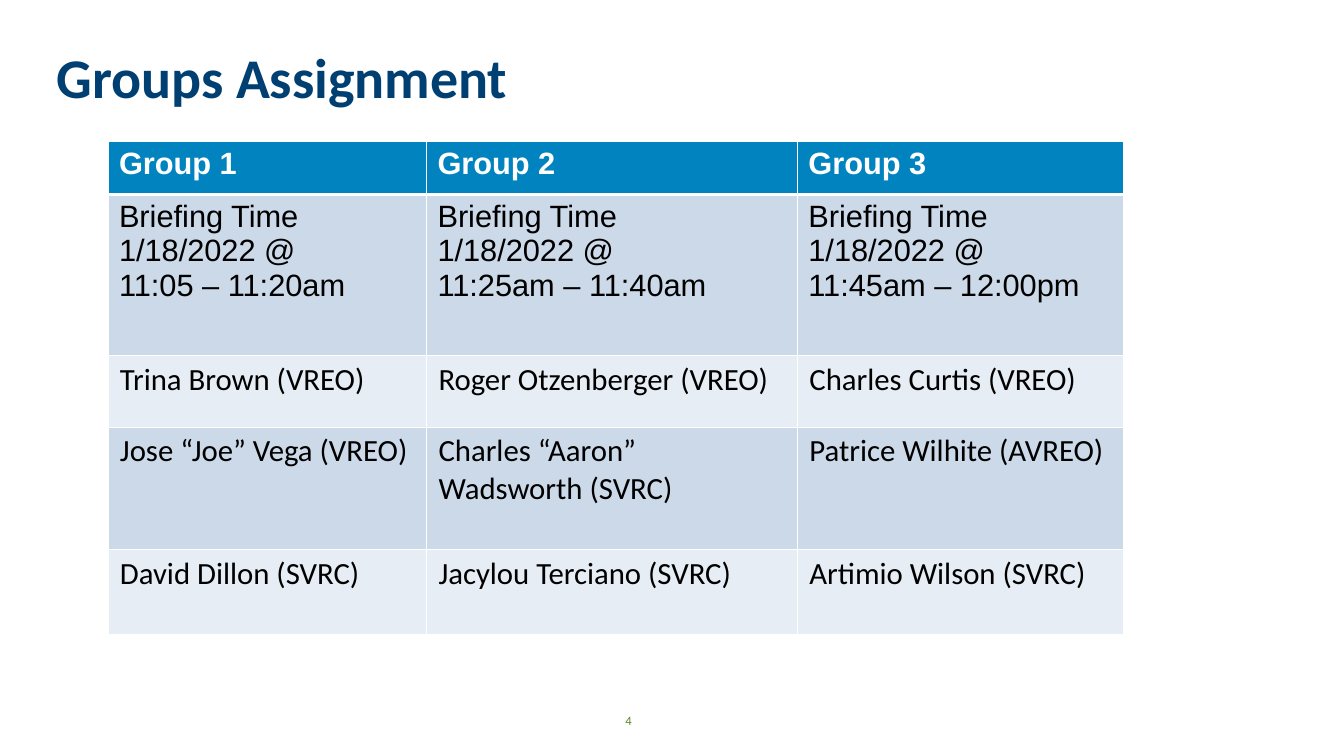
from lxml.etree import SubElement
from pptx import Presentation
from pptx.dml.color import RGBColor
from pptx.enum.text import MSO_ANCHOR, PP_ALIGN
from pptx.oxml.ns import qn
from pptx.util import Inches, Pt

COLORS = {
    "title": "003F72",
    "header": "0083BE",
    "odd": "CCD9E8",
    "even": "E7EDF4",
    "white": "FFFFFF",
    "black": "000000",
    "number": "598527",
}
SLIDE_WIDTH, SLIDE_HEIGHT = Inches(13.33), Inches(7.5)
COLUMN, ROW = SLIDE_WIDTH / 100, SLIDE_HEIGHT / 100

GROUP_WIDTHS = [23.7, 27.6, 24.3]
ROW_HEIGHTS = [7.07, 21.33, 9.47, 16.2, 11.2]
ASSIGNMENTS = [
    ["Group 1", "Group 2", "Group 3"],
    [f"Briefing Time\n1/18/2022 @\n{time}" for time in
     ("11:05 – 11:20am", "11:25am – 11:40am", "11:45am – 12:00pm")],
    ["Trina Brown (VREO)", "Roger Otzenberger (VREO)", "Charles Curtis (VREO)"],
    ["Jose “Joe” Vega (VREO)", "Charles “Aaron” Wadsworth (SVRC)", "Patrice Wilhite (AVREO)"],
    ["David Dillon (SVRC)", "Jacylou Terciano (SVRC)", "Artimio Wilson (SVRC)"],
]


def grid_box(left, top, width, height):
    return (round(left * COLUMN), round(top * ROW),
            round(width * COLUMN), round(height * ROW))


def style_text(frame, font_name, size, color, bold=False):
    for paragraph in frame.paragraphs:
        for run in paragraph.runs:
            run.font.name = font_name
            run.font.size = Pt(size)
            run.font.bold = bold
            run.font.color.rgb = RGBColor.from_string(COLORS[color])


def add_borders(cell, bottom_width, top_width):
    properties = cell._tc.get_or_add_tcPr()
    widths = {"a:lnL": 1, "a:lnR": 1, "a:lnT": top_width, "a:lnB": bottom_width}
    for position, (side, width) in enumerate(widths.items()):
        line = SubElement(properties, qn(side), w=str(Pt(width)))
        fill = SubElement(line, qn("a:solidFill"))
        SubElement(fill, qn("a:srgbClr"), val=COLORS["white"])
        properties.insert(position, line)


def place_title(slide, box):
    title = slide.shapes.title
    title.left, title.top, title.width, title.height = box
    frame = title.text_frame
    frame.text = "Groups Assignment"
    frame.vertical_anchor = MSO_ANCHOR.MIDDLE
    frame.paragraphs[0].alignment = PP_ALIGN.LEFT
    frame.paragraphs[0].line_spacing = 0.9
    style_text(frame, "Calibri", 40, "title", True)


def format_cell(cell, text, row_index):
    is_header = row_index == 0
    is_name = row_index > 1
    shade = "header" if is_header else "odd" if row_index % 2 else "even"
    cell.text_frame.text = text
    cell.margin_left = cell.margin_right = Inches(0.12 if is_name else 0.11)
    cell.margin_top = cell.margin_bottom = Inches(0.05)
    cell.fill.solid()
    cell.fill.fore_color.rgb = RGBColor.from_string(COLORS[shade])
    add_borders(cell, 3 if is_header else 1, 3 if row_index == 1 else 1)
    style_text(cell.text_frame, "Calibri" if is_name else "Arial", 22,
               "white" if is_header else "black", is_header)


def place_assignments(slide, box):
    table = slide.shapes.add_table(len(ASSIGNMENTS), len(GROUP_WIDTHS), *box).table
    for column, share in zip(table.columns, GROUP_WIDTHS):
        column.width = round(box[2] * share / sum(GROUP_WIDTHS))
    for row_index, texts in enumerate(ASSIGNMENTS):
        table.rows[row_index].height = round(box[3] * ROW_HEIGHTS[row_index] / sum(ROW_HEIGHTS))
        for column_index, text in enumerate(texts):
            format_cell(table.cell(row_index, column_index), text, row_index)


def place_page_number(slide, box):
    frame = slide.shapes.add_textbox(*box).text_frame
    frame.word_wrap = True
    frame.text = "4"
    frame.vertical_anchor = MSO_ANCHOR.MIDDLE
    frame.paragraphs[0].alignment = PP_ALIGN.CENTER
    style_text(frame, "Calibri", 9, "number")


def main():
    deck = Presentation()
    deck.slide_width, deck.slide_height = SLIDE_WIDTH, SLIDE_HEIGHT
    slide = deck.slides.add_slide(deck.slide_layouts[5])
    place_title(slide, grid_box(3.45, 4.93, 79.74, 11.33))
    place_assignments(slide, grid_box(8.03, 18.67, sum(GROUP_WIDTHS), sum(ROW_HEIGHTS)))
    place_page_number(slide, grid_box(43.96, 92.67, 5.63, 5.33))
    deck.save("out.pptx")


if __name__ == "__main__":
    main()
